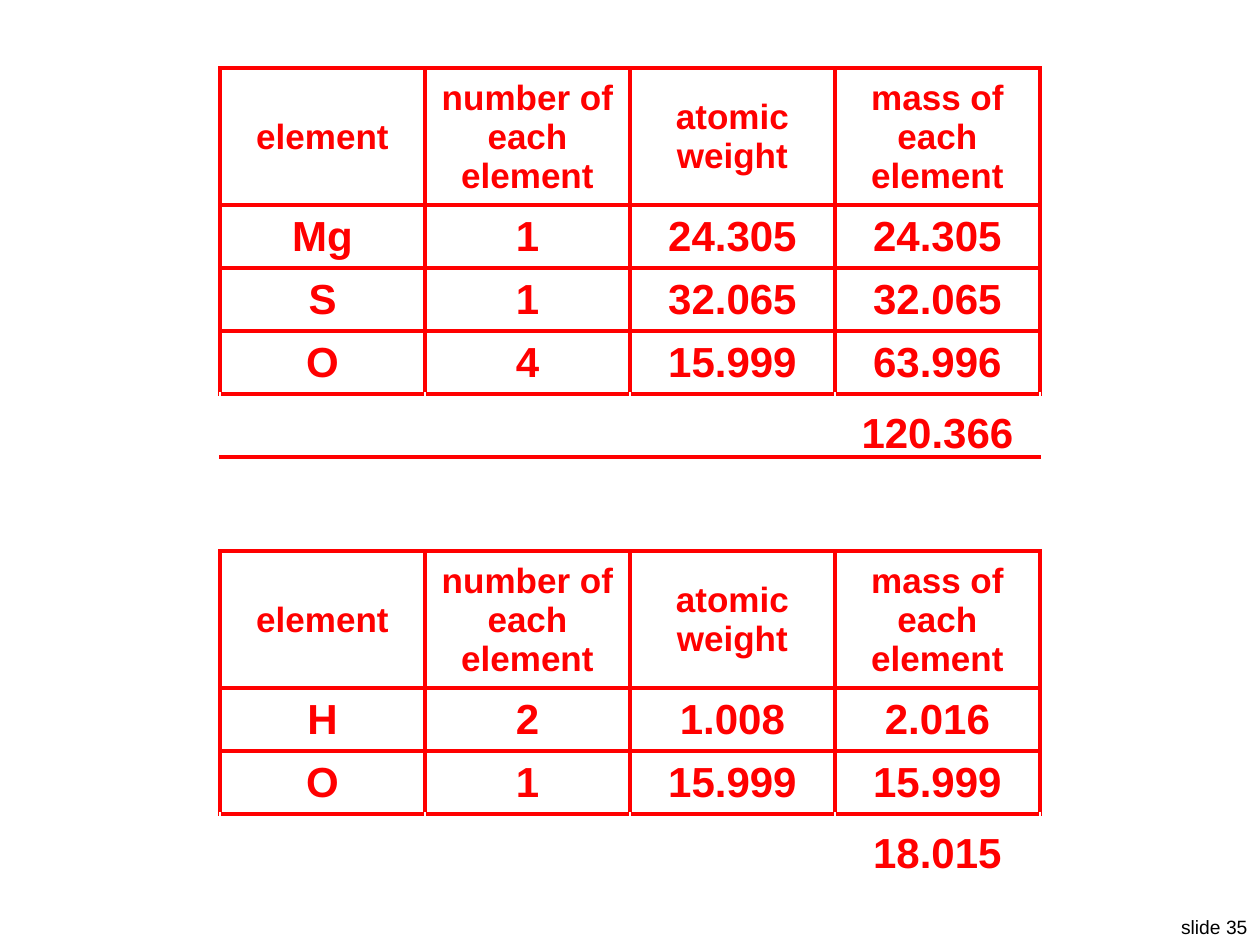
import lxml.etree
import pptx
import pptx.dml.color
import pptx.enum.text
import pptx.oxml.ns
import pptx.util

EMU_PER_PX = 914400 / 126
RED, WHITE, BLACK = "FF0000", "FFFFFF", "000000"
HEADINGS = ["element", "number of each element", "atomic weight", "mass of each element"]
ROW_HEIGHTS = {"heading": 137, "data": 63, "total": 63, "gap": 47}
BOXED = ("heading", "data")
ROWS = [
    ("heading", HEADINGS),
    ("data", ["Mg", "1", "24.305", "24.305"]),
    ("data", ["S", "1", "32.065", "32.065"]),
    ("data", ["O", "4", "15.999", "63.996"]),
    ("total", ["", "", "", "120.366"]),
    ("gap", [""] * 4),
    ("gap", [""] * 4),
    ("heading", HEADINGS),
    ("data", ["H", "2", "1.008", "2.016"]),
    ("data", ["O", "1", "15.999", "15.999"]),
    ("total", ["", "", "", "18.015"]),
]


def px(length):
    return pptx.util.Emu(round(length * EMU_PER_PX))


def color(value):
    return pptx.dml.color.RGBColor.from_string(value)


def style_paragraph(paragraph, size, value, alignment, bold=False):
    paragraph.alignment = alignment
    paragraph.font.name = "Arial"
    paragraph.font.size = pptx.util.Pt(size)
    paragraph.font.bold = bold
    paragraph.font.color.rgb = color(value)


def set_borders(cell, borders):
    properties = cell._tc.get_or_add_tcPr()
    qualified = pptx.oxml.ns.qn
    for side in "LRTB":
        value = borders[side]
        width = pptx.util.Pt(2.25 if value == RED else 1)
        line = lxml.etree.SubElement(properties, qualified(f"a:ln{side}"), w=str(int(width)))
        fill = lxml.etree.SubElement(line, qualified("a:solidFill"))
        lxml.etree.SubElement(fill, qualified("a:srgbClr"), val=value)


def row_borders(index):
    kinds = [kind for kind, _ in ROWS]
    kind = kinds[index]
    above = kinds[index - 1] if index else "gap"
    below = kinds[index + 1] if index + 1 < len(kinds) else "end"
    side = RED if kind in BOXED else WHITE
    top_is_red = kind in BOXED or above in BOXED or above == "total"
    bottom_is_red = kind in BOXED or below in BOXED or (kind, below) == ("total", "gap")
    return {
        "L": side,
        "R": side,
        "T": RED if top_is_red else WHITE,
        "B": RED if bottom_is_red else WHITE,
    }


def fill_cell(cell, text, kind, borders):
    anchor = pptx.enum.text.MSO_ANCHOR
    cell.text = text
    cell.margin_left = cell.margin_right = cell.margin_top = px(1)
    cell.margin_bottom = 0
    cell.vertical_anchor = anchor.BOTTOM if kind == "total" else anchor.MIDDLE
    size = 20 if kind in ("heading", "gap") else 24
    center = pptx.enum.text.PP_ALIGN.CENTER
    style_paragraph(cell.text_frame.paragraphs[0], size, RED, center, bold=True)
    set_borders(cell, borders)
    cell.fill.background()


def add_mass_table(slide, left, top, width):
    heights = [ROW_HEIGHTS[kind] for kind, _ in ROWS]
    frame = slide.shapes.add_table(
        len(ROWS), len(HEADINGS), px(left), px(top), px(width), px(sum(heights))
    )
    table = frame.table
    table.first_row = table.horz_banding = False
    for column in table.columns:
        column.width = px(width / len(HEADINGS))
    for index, (kind, texts) in enumerate(ROWS):
        table.rows[index].height = px(heights[index])
        borders = row_borders(index)
        for cell, text in zip(table.rows[index].cells, texts):
            fill_cell(cell, text, kind, borders)


def add_slide_label(slide, left, top, width, height):
    label = slide.shapes.add_textbox(px(left), px(top), px(width), px(height))
    label.text_frame.word_wrap = False
    paragraph = label.text_frame.paragraphs[0]
    paragraph.text = "slide 35"
    style_paragraph(paragraph, 11, BLACK, pptx.enum.text.PP_ALIGN.RIGHT)


def main():
    presentation = pptx.Presentation()
    presentation.slide_width = px(1260)
    presentation.slide_height = px(945)
    slide = presentation.slides.add_slide(presentation.slide_layouts[6])
    add_slide_label(slide, 1166, 909, 94, 36)
    add_mass_table(slide, 220, 68, 820)
    presentation.save("out.pptx")


if __name__ == "__main__":
    main()
